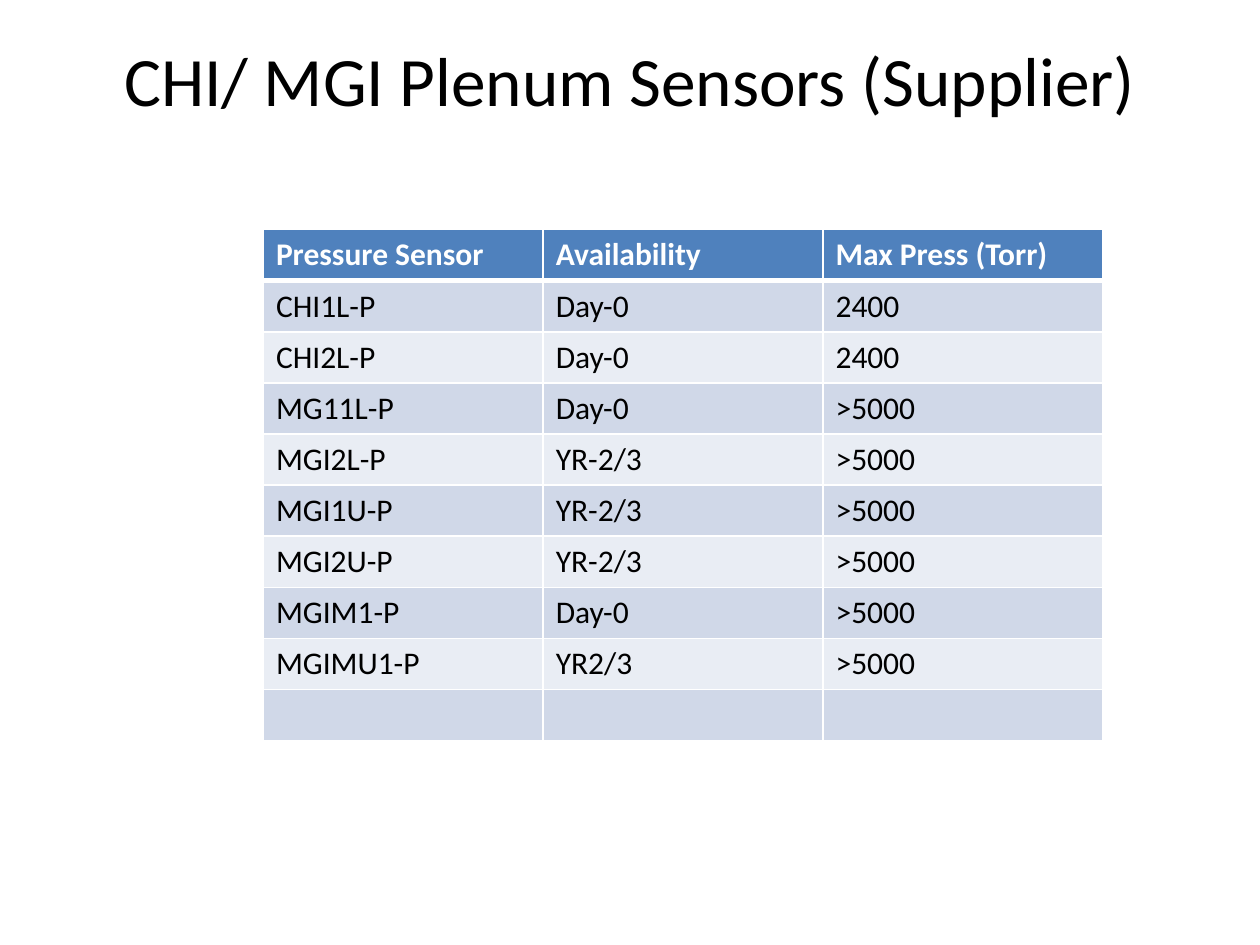
"""Build the plenum pressure sensor slide."""
import pptx
import pptx.dml.color
import pptx.enum.text
import pptx.oxml
import pptx.oxml.ns
import pptx.util

Cm = pptx.util.Cm
Pt = pptx.util.Pt
RGBColor = pptx.dml.color.RGBColor

FONT = "Calibri"
BLACK = RGBColor(0x00, 0x00, 0x00)
WHITE = RGBColor(0xFF, 0xFF, 0xFF)
HEADER = RGBColor(0x4F, 0x81, 0xBD)
BANDS = (RGBColor(0xE9, 0xED, 0xF4), RGBColor(0xD0, 0xD8, 0xE8))

SENSORS = [
    ("Pressure Sensor", "Availability", "Max Press (Torr)"),
    ("CHI1L-P", "Day-0", "2400"),
    ("CHI2L-P", "Day-0", "2400"),
    ("MG11L-P", "Day-0", ">5000"),
    ("MGI2L-P", "YR-2/3", ">5000"),
    ("MGI1U-P", "YR-2/3", ">5000"),
    ("MGI2U-P", "YR-2/3", ">5000"),
    ("MGIM1-P", "Day-0", ">5000"),
    ("MGIMU1-P", "YR2/3", ">5000"),
    ("", "", ""),
]
COL_WIDTH = Cm(5.64)
ROW_HEIGHT = Cm(1.03)


def format_text(tf, size, color, bold=False):
    """Apply one font style to every run of a text frame."""
    for p in tf.paragraphs:
        for r in p.runs:
            r.font.name = FONT
            r.font.size = Pt(size)
            r.font.bold = bold
            r.font.color.rgb = color


def set_borders(cell, top, bottom):
    """Give a cell white borders, with its top and bottom widths in points."""
    widths = {"lnL": 1, "lnR": 1, "lnT": top, "lnB": bottom}
    tc_pr = cell._tc.get_or_add_tcPr()
    for i, (side, width) in enumerate(widths.items()):
        line = pptx.oxml.parse_xml(
            f'<a:{side} {pptx.oxml.ns.nsdecls("a")} w="{Pt(width)}">'
            f'<a:solidFill><a:srgbClr val="{WHITE}"/></a:solidFill></a:{side}>'
        )
        tc_pr.insert(i, line)


def add_title(s, text):
    """Place and format the slide title."""
    sp = s.shapes.title
    sp.left, sp.top, sp.width, sp.height = Cm(1.27), Cm(0), Cm(22.86), Cm(3.18)
    tf = sp.text_frame
    tf.text = text
    tf.vertical_anchor = pptx.enum.text.MSO_ANCHOR.MIDDLE
    tf.paragraphs[0].alignment = pptx.enum.text.PP_ALIGN.CENTER
    format_text(tf, 39.6, BLACK)


def add_sensor_table(s, rows):
    """Add the banded table, with the first row as its header."""
    n_rows, n_cols = len(rows), len(rows[0])
    table = s.shapes.add_table(
        n_rows, n_cols, Cm(5.31), Cm(4.63), COL_WIDTH * n_cols, ROW_HEIGHT * n_rows
    ).table
    for i, row in enumerate(rows):
        header = i == 0
        for j, text in enumerate(row):
            cell = table.cell(i, j)
            cell.text = text
            format_text(cell.text_frame, 18, WHITE if header else BLACK, header)
            cell.fill.solid()
            cell.fill.fore_color.rgb = HEADER if header else BANDS[i % 2]
            set_borders(cell, 3 if i == 1 else 1, 3 if header else 1)


def main():
    """Build and save the presentation."""
    prs = pptx.Presentation()
    prs.slide_width, prs.slide_height = Cm(25.4), Cm(19.05)
    s = prs.slides.add_slide(prs.slide_layouts[5])
    add_title(s, "CHI/ MGI Plenum Sensors (Supplier)")
    add_sensor_table(s, SENSORS)
    prs.save("out.pptx")


if __name__ == "__main__":
    main()
